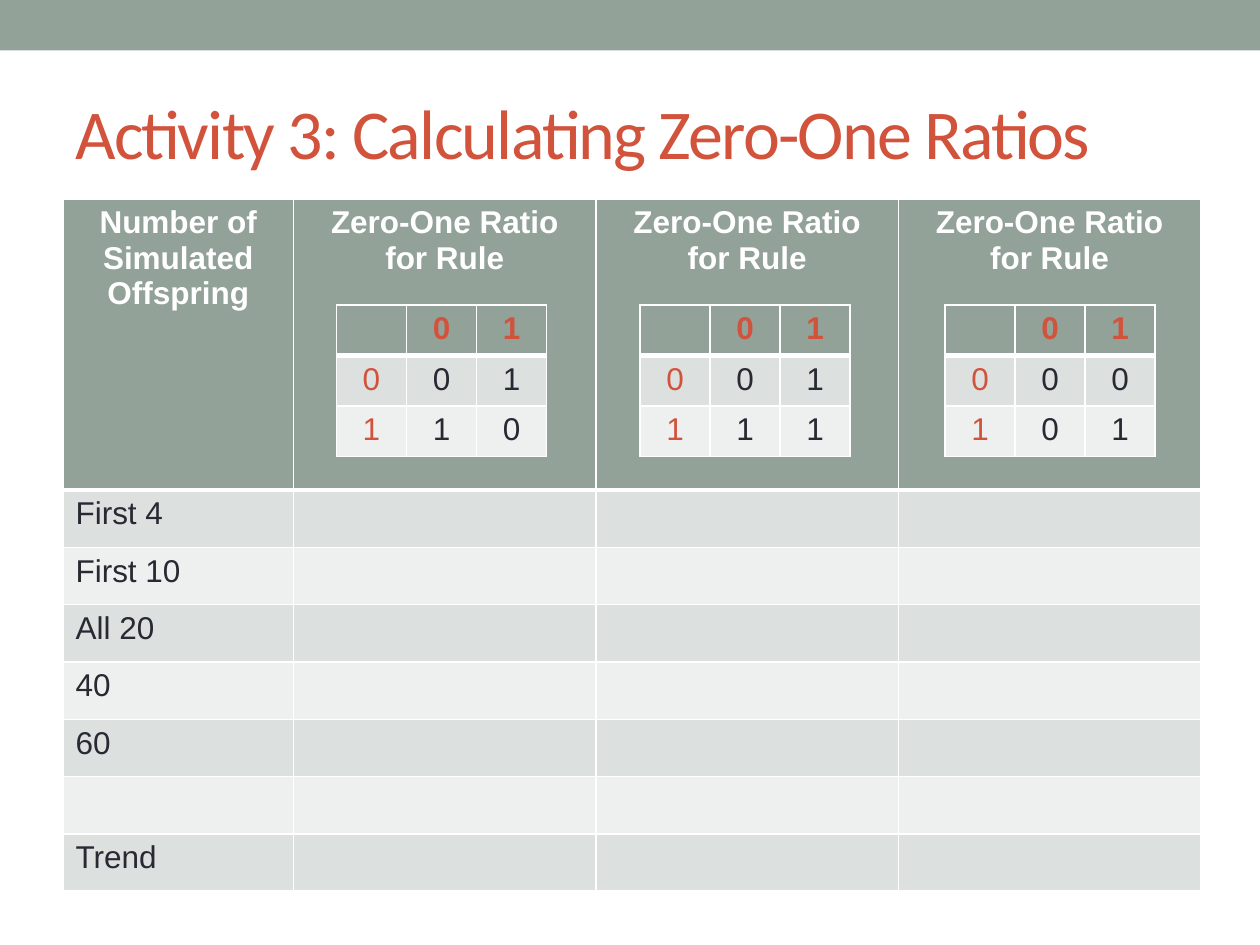
from dataclasses import dataclass

from lxml import etree
from pptx import Presentation
from pptx import util as u
from pptx.dml.color import RGBColor
from pptx.enum import shapes, text
from pptx.oxml import ns


@dataclass(frozen=True)
class Theme:
    """Colours, fonts and type sizes of the slide."""

    sage: str = "93A299"
    brick: str = "D2533C"
    ink: str = "292934"
    white: str = "FFFFFF"
    bands: tuple = ("DCE0DE", "EEF0EF")
    title_font: str = "Calibri"
    body_font: str = "Arial"
    title_size: int = 40
    body_size: int = 18
    thin: int = 1
    thick: int = 3


class Sheet:
    """Draws bands, titles and tables on one slide in one theme."""

    def __init__(self, slide, theme):
        self.slide = slide
        self.theme = theme

    def style(self, run, font, size, color, bold=False):
        run.font.name = font
        run.font.size = u.Pt(size)
        run.font.bold = bold
        run.font.color.rgb = RGBColor.from_string(color)

    def band(self, left, top, width, height):
        band = self.slide.shapes.add_shape(
            shapes.MSO_SHAPE.RECTANGLE, *map(u.Inches, (left, top, width, height)))
        band.shadow.inherit = False
        band.fill.solid()
        band.fill.fore_color.rgb = RGBColor.from_string(self.theme.sage)
        band.line.fill.background()

    def title(self, wording, left, top, width, height):
        frame = self.slide.shapes.add_textbox(
            *map(u.Inches, (left, top, width, height))).text_frame
        frame.word_wrap = True
        frame.vertical_anchor = text.MSO_ANCHOR.MIDDLE
        frame.text = wording
        run = frame.paragraphs[0].runs[0]
        self.style(run, self.theme.title_font, self.theme.title_size, self.theme.brick)
        run.font._element.set("spc", "-100")

    def borders(self, cell, row):
        widths = {side: self.theme.thin for side in ("lnL", "lnR", "lnT", "lnB")}
        if row < 2:
            widths["lnT" if row else "lnB"] = self.theme.thick
        properties = cell._tc.get_or_add_tcPr()
        for side, width in widths.items():
            line = etree.SubElement(properties, ns.qn(f"a:{side}"), w=str(u.Pt(width)))
            fill = etree.SubElement(line, ns.qn("a:solidFill"))
            etree.SubElement(fill, ns.qn("a:srgbClr"), val=self.theme.white)

    def table(self, rows, left, top, widths, heights, color_of, centred):
        grid = self.slide.shapes.add_table(
            len(rows), len(widths),
            *map(u.Inches, (left, top, sum(widths), sum(heights)))).table
        grid.first_row = grid.horz_banding = False
        for column, width in zip(grid.columns, widths):
            column.width = u.Inches(width)
        for r, (wordings, height) in enumerate(zip(rows, heights)):
            grid.rows[r].height = u.Inches(height)
            fill = self.theme.bands[(r - 1) % 2] if r else self.theme.sage
            for c, wording in enumerate(wordings):
                cell = grid.cell(r, c)
                self.borders(cell, r)
                cell.fill.solid()
                cell.fill.fore_color.rgb = RGBColor.from_string(fill)
                cell.text = wording
                paragraph = cell.text_frame.paragraphs[0]
                if centred or r == 0:
                    paragraph.alignment = text.PP_ALIGN.CENTER
                for run in paragraph.runs:
                    self.style(run, self.theme.body_font, self.theme.body_size,
                               color_of(r, c), bold=r == 0)

    def ratio_table(self, stages, left, top):
        header = ["Number of Simulated Offspring"] + ["Zero-One Ratio for Rule"] * 3
        rows = [header] + [[stage, "", "", ""] for stage in stages]
        self.table(rows, left, top, [1.83] + [2.4] * 3, [2.31] + [0.455] * len(stages),
                   lambda r, c: self.theme.ink if r else self.theme.white, centred=False)

    def rule_table(self, outcomes, left, top, row_height):
        rows = [["", "0", "1"]] + [[str(i), *pair] for i, pair in enumerate(outcomes)]
        self.table(rows, left, top, [0.556] * 3, [row_height] * 3,
                   lambda r, c: self.theme.ink if r and c else self.theme.brick,
                   centred=True)


def main():
    deck = Presentation()
    deck.slide_width, deck.slide_height = u.Inches(10), u.Inches(7.5)
    sheet = Sheet(deck.slides.add_slide(deck.slide_layouts[6]), Theme())
    sheet.band(0, 0, 10, 0.4)
    sheet.title("Activity 3: Calculating Zero-One Ratios", 0.5, 0.5, 9, 1.08)
    stages = ["First 4", "First 10", "All 20", "40", "60", "", "Trend"]
    sheet.ratio_table(stages, 0.5, 1.58)
    rules = [(("01", "10"), 2.67, 0.38), (("01", "11"), 5.08, 0.39), (("00", "01"), 7.5, 0.39)]
    for outcomes, left, row_height in rules:
        sheet.rule_table(outcomes, left, 2.42, row_height)
    deck.save("out.pptx")


if __name__ == "__main__":
    main()
